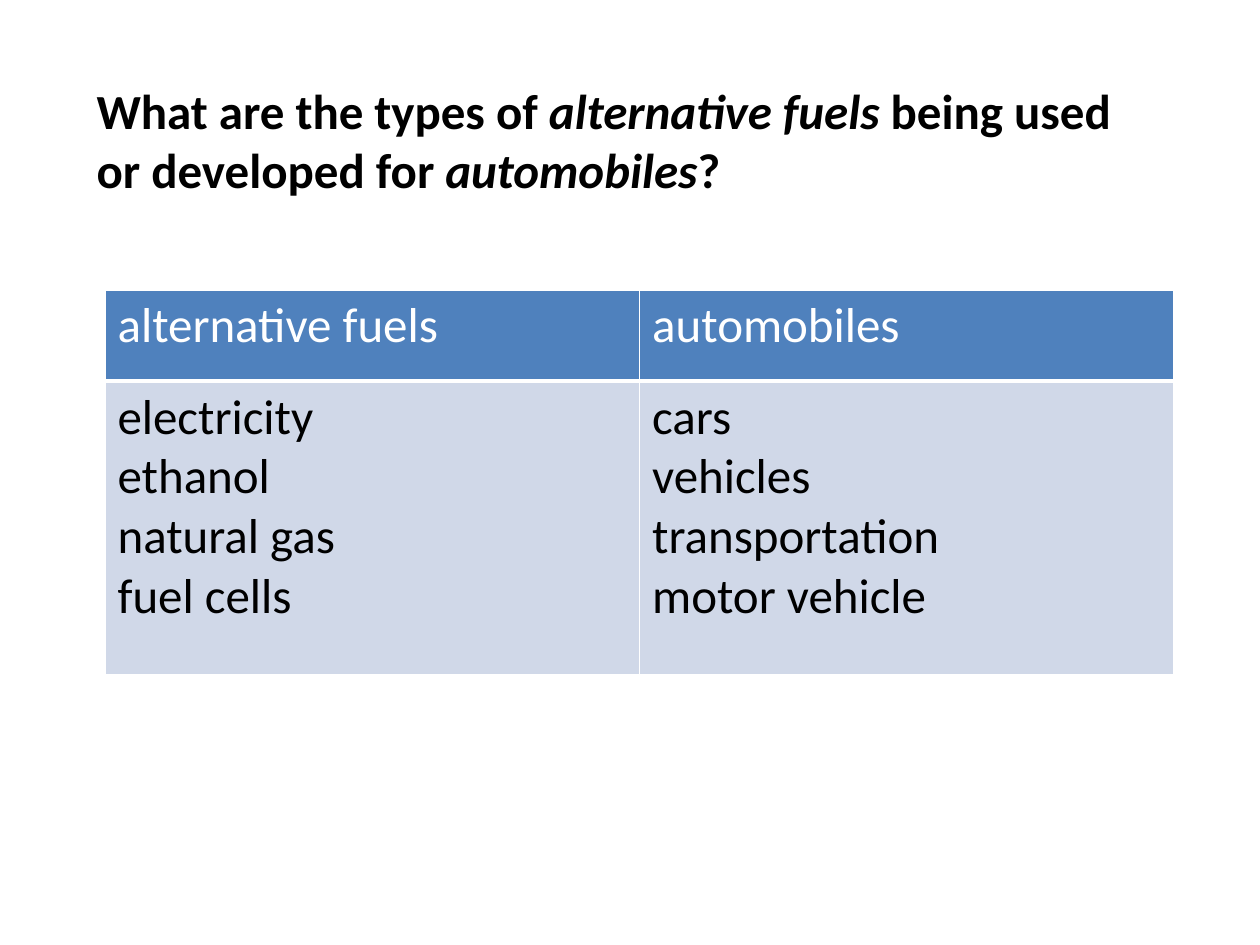
import lxml.etree
import pptx
import pptx.dml.color
import pptx.enum.text
import pptx.oxml.ns
import pptx.util

Pt = pptx.util.Pt
RGBColor = pptx.dml.color.RGBColor
qn = pptx.oxml.ns.qn

BLACK = RGBColor(0x00, 0x00, 0x00)
WHITE = RGBColor(0xFF, 0xFF, 0xFF)
HEADER_BLUE = RGBColor(0x4F, 0x81, 0xBD)
BODY_BLUE = RGBColor(0xD0, 0xD8, 0xE8)

TITLE_RUNS = [
    ("What are the types of ", False),
    ("alternative fuels ", True),
    ("being used or developed for ", False),
    ("automobiles", True),
    ("?", False),
]
SYNONYMS = {
    "alternative fuels": ["electricity", "ethanol", "natural gas", "fuel cells"],
    "automobiles": ["cars", "vehicles", "transportation", "motor vehicle"],
}


def add_text(paragraph, text, color=BLACK, size=28, bold=False, italic=False):
    paragraph.alignment = pptx.enum.text.PP_ALIGN.LEFT
    run = paragraph.add_run()
    run.text = text
    run.font.name = "Calibri"
    run.font.size = Pt(size)
    run.font.bold = bold
    run.font.italic = italic
    run.font.color.rgb = color


def set_title(slide):
    title = slide.shapes.title
    title.left, title.top = Pt(48), Pt(42.5)
    title.width, title.height = Pt(611), Pt(75)
    frame = title.text_frame
    frame.word_wrap = True
    frame.vertical_anchor = pptx.enum.text.MSO_ANCHOR.TOP
    frame.auto_size = pptx.enum.text.MSO_AUTO_SIZE.SHAPE_TO_FIT_TEXT
    for text, italic in TITLE_RUNS:
        add_text(frame.paragraphs[0], text, bold=True, italic=italic)


def set_borders(cell, **widths):
    """Draw white borders; widths are in points, keyed by side L, R, T, B."""
    properties = cell._tc.get_or_add_tcPr()
    for side, width in widths.items():
        line = lxml.etree.SubElement(properties, qn(f"a:ln{side}"), w=str(Pt(width)))
        fill = lxml.etree.SubElement(line, qn("a:solidFill"))
        lxml.etree.SubElement(fill, qn("a:srgbClr"), val=str(WHITE))


def fill_cell(cell, lines, fill, color, top, bottom):
    set_borders(cell, L=1, R=1, T=top, B=bottom)
    cell.fill.solid()
    cell.fill.fore_color.rgb = fill
    frame = cell.text_frame
    for index, text in enumerate(lines):
        paragraph = frame.add_paragraph() if index else frame.paragraphs[0]
        add_text(paragraph, text, color=color)


def add_synonym_table(slide):
    frame = slide.shapes.add_table(
        2, len(SYNONYMS), Pt(60), Pt(165.6), Pt(611), Pt(220)
    )
    table = frame.table
    table.rows[0].height, table.rows[1].height = Pt(52.2), Pt(167.8)
    for column, (term, synonyms) in enumerate(SYNONYMS.items()):
        fill_cell(table.cell(0, column), [term], HEADER_BLUE, WHITE, top=1, bottom=3)
        fill_cell(table.cell(1, column), synonyms, BODY_BLUE, BLACK, top=3, bottom=1)


def main():
    presentation = pptx.Presentation()
    presentation.slide_width, presentation.slide_height = Pt(720), Pt(540)
    # Title Only layout
    slide = presentation.slides.add_slide(presentation.slide_layouts[5])
    # Question
    set_title(slide)
    # Search terms and their synonyms
    add_synonym_table(slide)
    presentation.save("out.pptx")


if __name__ == "__main__":
    main()
